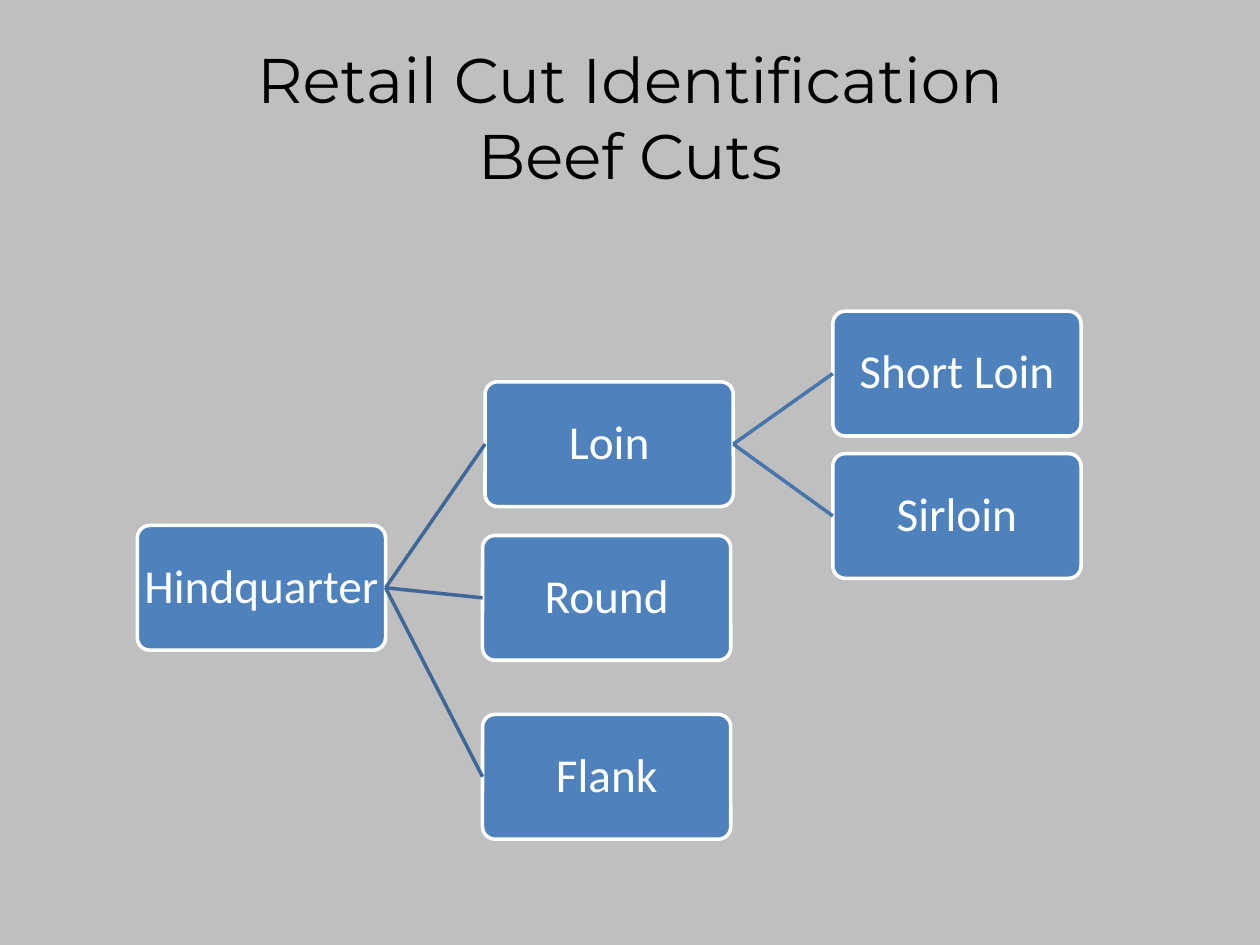
from pptx import Presentation
from pptx.dml.color import RGBColor
from pptx.enum.shapes import MSO_CONNECTOR, MSO_SHAPE
from pptx.enum.text import MSO_ANCHOR, PP_ALIGN
from pptx.oxml.ns import qn
from pptx.util import Inches, Pt
from lxml import etree

ROUNDED = MSO_SHAPE.ROUNDED_RECTANGLE
STRAIGHT = MSO_CONNECTOR.STRAIGHT
MIDDLE = MSO_ANCHOR.MIDDLE
CENTER = PP_ALIGN.CENTER
LEFT_SIDE, RIGHT_SIDE = 1, 3

GREY = RGBColor(0xBF, 0xBF, 0xBF)
BLACK = RGBColor(0, 0, 0)
WHITE = RGBColor(0xFF, 0xFF, 0xFF)
BLUE = RGBColor(0x4F, 0x81, 0xBD)
FIRST_BRANCH = RGBColor(0x3F, 0x67, 0x97)
SECOND_BRANCH = RGBColor(0x48, 0x75, 0xAC)

CUTS = [
    ("Hindquarter", 1.09, 4.17, None, None),
    ("Loin", 3.85, 3.03, "Hindquarter", FIRST_BRANCH),
    ("Short Loin", 6.61, 2.47, "Loin", SECOND_BRANCH),
    ("Sirloin", 6.61, 3.6, "Loin", SECOND_BRANCH),
    ("Round", 3.83, 4.25, "Hindquarter", FIRST_BRANCH),
    ("Flank", 3.83, 5.67, "Hindquarter", FIRST_BRANCH),
]


class CutChart:
    title_font = "Montserrat"
    box_font = "Calibri"
    box_width = Inches(1.97)
    box_height = Inches(0.99)
    inset = Inches(0.02)
    line_width = Pt(2)

    def __init__(self, page):
        self.page = page
        fill = page.background.fill
        fill.solid()
        fill.fore_color.rgb = GREY

    def format_paragraph(self, para, name, size, color):
        para.alignment = CENTER
        para.font.name = name
        para.font.size = Pt(size)
        para.font.color.rgb = color

    def add_title(self, first_line, second_line):
        title = self.page.shapes.title
        title.left, title.top = Inches(0.5), Inches(0.3)
        title.width, title.height = Inches(9), Inches(1.25)
        title.text_frame.vertical_anchor = MIDDLE
        para = title.text_frame.paragraphs[0]
        para.add_run().text = first_line
        para.add_line_break()
        para.add_run().text = second_line
        self.format_paragraph(para, self.title_font, 36, BLACK)

    def add_box(self, label, left, top):
        box = self.page.shapes.add_shape(
            ROUNDED, Inches(left), Inches(top), self.box_width, self.box_height)
        box.adjustments[0] = 0.1
        box.shadow.inherit = False
        box.fill.solid()
        box.fill.fore_color.rgb = BLUE
        box.line.color.rgb = WHITE
        box.line.width = self.line_width
        frame = box.text_frame
        frame.word_wrap = True
        frame.vertical_anchor = MIDDLE
        frame.margin_left = frame.margin_right = self.inset
        frame.margin_top = frame.margin_bottom = self.inset
        para = frame.paragraphs[0]
        para.text = label
        para.line_spacing = 0.9
        self.format_paragraph(para, self.box_font, 27, WHITE)
        return box

    def add_branch(self, parent, child, color):
        branch = self.page.shapes.add_connector(STRAIGHT, 0, 0, 0, 0)
        branch.begin_connect(parent, RIGHT_SIDE)
        branch.end_connect(child, LEFT_SIDE)
        branch.line.color.rgb = color
        branch.line.width = self.line_width
        etree.SubElement(branch._element.spPr, qn("a:effectLst"))


def main():
    deck = Presentation()
    deck.slide_width, deck.slide_height = Inches(10), Inches(7.5)
    chart = CutChart(deck.slides.add_slide(deck.slide_layouts[5]))
    chart.add_title("Retail Cut Identification", "Beef Cuts")
    boxes = {}
    for label, left, top, parent, color in CUTS:
        boxes[label] = chart.add_box(label, left, top)
        if parent:
            chart.add_branch(boxes[parent], boxes[label], color)
    deck.save("out.pptx")


if __name__ == "__main__":
    main()
